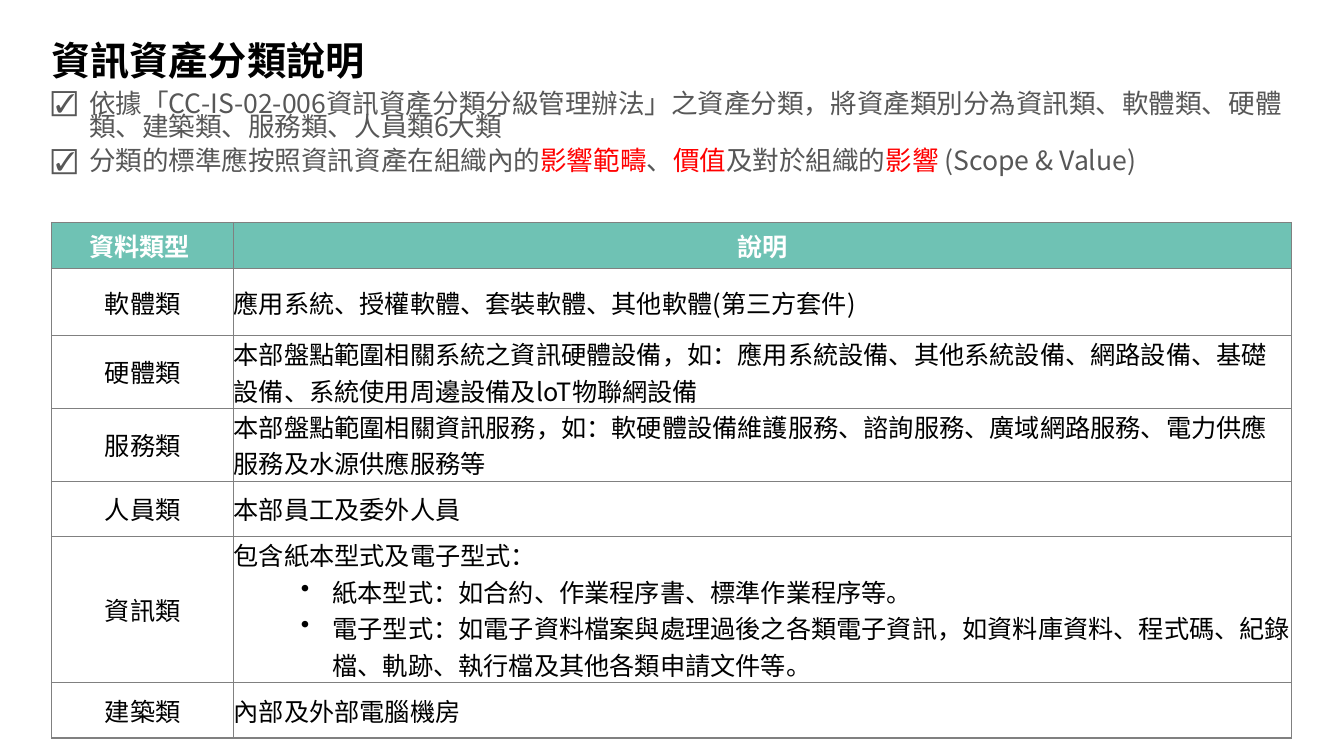
from lxml.etree import SubElement
from pptx import Presentation
from pptx.dml.color import RGBColor
from pptx.enum.text import MSO_ANCHOR, MSO_AUTO_SIZE, PP_ALIGN
from pptx.oxml.ns import qn
from pptx.util import Pt

FONT = "Noto Sans CJK SC"
BLACK = RGBColor(0x00, 0x00, 0x00)
WHITE = RGBColor(0xFF, 0xFF, 0xFF)
GRAY = RGBColor(0x57, 0x57, 0x57)
RED = RGBColor(0xFF, 0x00, 0x00)
TEAL = RGBColor(0x6F, 0xC2, 0xB4)
BORDER = RGBColor(0x80, 0x80, 0x80)

LEFT = 36.7
COLUMN_WIDTHS = (130.3, 755.3)
ROW_HEIGHTS = (33, 47.5, 48, 39.6, 39.6, 39.6, 39.6)

TITLE = "資訊資產分類說明"
PRINCIPLES = [
    [("依據「CC-IS-02-006資訊資產分類分級管理辦法」之資產分類，將資產類別分為資訊類、"
      "軟體類、硬體類、建築類、服務類、人員類6大類", GRAY)],
    [("分類的標準應按照資訊資產在組織內的", GRAY), ("影響範疇", RED), ("、", GRAY),
     ("價值", RED), ("及對於組織的", GRAY), ("影響 ", RED), ("(Scope & Value)", GRAY)],
]
HEADER = ("資料類型 ", "說明")
# The first line of a description is plain, the following ones are bulleted.
CATEGORIES = [
    ("軟體類", ["應用系統、授權軟體、套裝軟體、其他軟體(第三方套件)"]),
    ("硬體類", ["本部盤點範圍相關系統之資訊硬體設備，如：應用系統設備、其他系統設備、網路設備、"
             "基礎設備、系統使用周邊設備及loT物聯網設備"]),
    ("服務類", ["本部盤點範圍相關資訊服務，如：軟硬體設備維護服務、諮詢服務、廣域網路服務、"
             "電力供應服務及水源供應服務等"]),
    ("人員類", ["本部員工及委外人員"]),
    ("資訊類", ["包含紙本型式及電子型式：",
             "紙本型式：如合約、作業程序書、標準作業程序等。",
             "電子型式：如電子資料檔案與處理過後之各類電子資訊，如資料庫資料、程式碼、"
             "紀錄檔、軌跡、執行檔及其他各類申請文件等。"]),
    ("建築類", ["內部及外部電腦機房"]),
]


def add_text(paragraph, text, size=18, color=BLACK, bold=False):
    run = paragraph.add_run()
    run.text = text
    run.font.name = FONT
    run.font.size = Pt(size)
    run.font.bold = bold
    run.font.color.rgb = color
    SubElement(run.font._element, qn("a:ea"), typeface=FONT)


def add_bullet(paragraph, symbol, margin, hanging):
    properties = paragraph._p.get_or_add_pPr()
    properties.set("marL", str(Pt(margin)))
    properties.set("indent", str(-Pt(hanging)))
    SubElement(properties, qn("a:buChar"), char=symbol)


def paragraphs_for(frame, items):
    """Yield one paragraph of the frame with each item."""
    for index, item in enumerate(items):
        yield (frame.add_paragraph() if index else frame.paragraphs[0]), item


def place(placeholder, top, height, anchor, fitting):
    placeholder.left, placeholder.top = Pt(LEFT), Pt(top)
    placeholder.width, placeholder.height = Pt(923 - LEFT), Pt(height)
    frame = placeholder.text_frame
    frame.margin_left = frame.margin_right = frame.margin_top = frame.margin_bottom = 0
    frame.word_wrap = True
    frame.vertical_anchor = anchor
    frame.auto_size = fitting
    return frame


def fill_title(placeholder):
    frame = place(placeholder, 31.7, 26.6, MSO_ANCHOR.MIDDLE, MSO_AUTO_SIZE.NONE)
    heading = frame.paragraphs[0]
    heading.alignment = PP_ALIGN.LEFT
    heading.line_spacing = 0.9
    add_text(heading, TITLE, size=28, bold=True)


def fill_principles(placeholder):
    frame = place(placeholder, 67.7, 59.8, MSO_ANCHOR.TOP,
                  MSO_AUTO_SIZE.TEXT_TO_FIT_SHAPE)
    for principle, parts in paragraphs_for(frame, PRINCIPLES):
        principle.line_spacing = 0.9
        principle.space_before = Pt(10)
        add_bullet(principle, "☑", 27, 27)
        for text, color in parts:
            add_text(principle, text, size=20, color=color)


def format_cell(cell, fill=None):
    cell.margin_left = cell.margin_right = cell.margin_top = cell.margin_bottom = 0
    cell.vertical_anchor = MSO_ANCHOR.MIDDLE
    properties = cell._tc.get_or_add_tcPr()
    for side in ("lnL", "lnR", "lnT", "lnB"):
        line = SubElement(properties, qn(f"a:{side}"), w=str(Pt(1)))
        SubElement(SubElement(line, qn("a:solidFill")), qn("a:srgbClr"), val=str(BORDER))
    if fill is None:
        cell.fill.background()
    else:
        cell.fill.solid()
        cell.fill.fore_color.rgb = fill


def write_centered(cell, text, fill=None, **text_format):
    format_cell(cell, fill)
    label = cell.text_frame.paragraphs[0]
    label.alignment = PP_ALIGN.CENTER
    add_text(label, text, **text_format)


def write_description(cell, lines):
    format_cell(cell)
    for index, (paragraph, line) in enumerate(paragraphs_for(cell.text_frame, lines)):
        if index:
            paragraph.level = 1
            add_bullet(paragraph, "•", 70.5, 22.5)
        add_text(paragraph, line)


def add_category_table(slide):
    table = slide.shapes.add_table(
        len(ROW_HEIGHTS), len(COLUMN_WIDTHS), Pt(LEFT), Pt(159),
        Pt(sum(COLUMN_WIDTHS)), Pt(sum(ROW_HEIGHTS))).table
    table.horz_banding = False
    for column, width in zip(table.columns, COLUMN_WIDTHS):
        column.width = Pt(width)
    for row, height in zip(table.rows, ROW_HEIGHTS):
        row.height = Pt(height)
    for column, heading in enumerate(HEADER):
        write_centered(table.cell(0, column), heading, fill=TEAL, color=WHITE, bold=True)
    for row, (category, description) in enumerate(CATEGORIES, start=1):
        write_centered(table.cell(row, 0), category)
        write_description(table.cell(row, 1), description)


def main():
    presentation = Presentation()
    presentation.slide_width, presentation.slide_height = Pt(960), Pt(540)
    slide = presentation.slides.add_slide(presentation.slide_layouts[1])
    fill_title(slide.shapes.title)
    fill_principles(slide.placeholders[1])
    add_category_table(slide)
    presentation.save("out.pptx")


if __name__ == "__main__":
    main()
